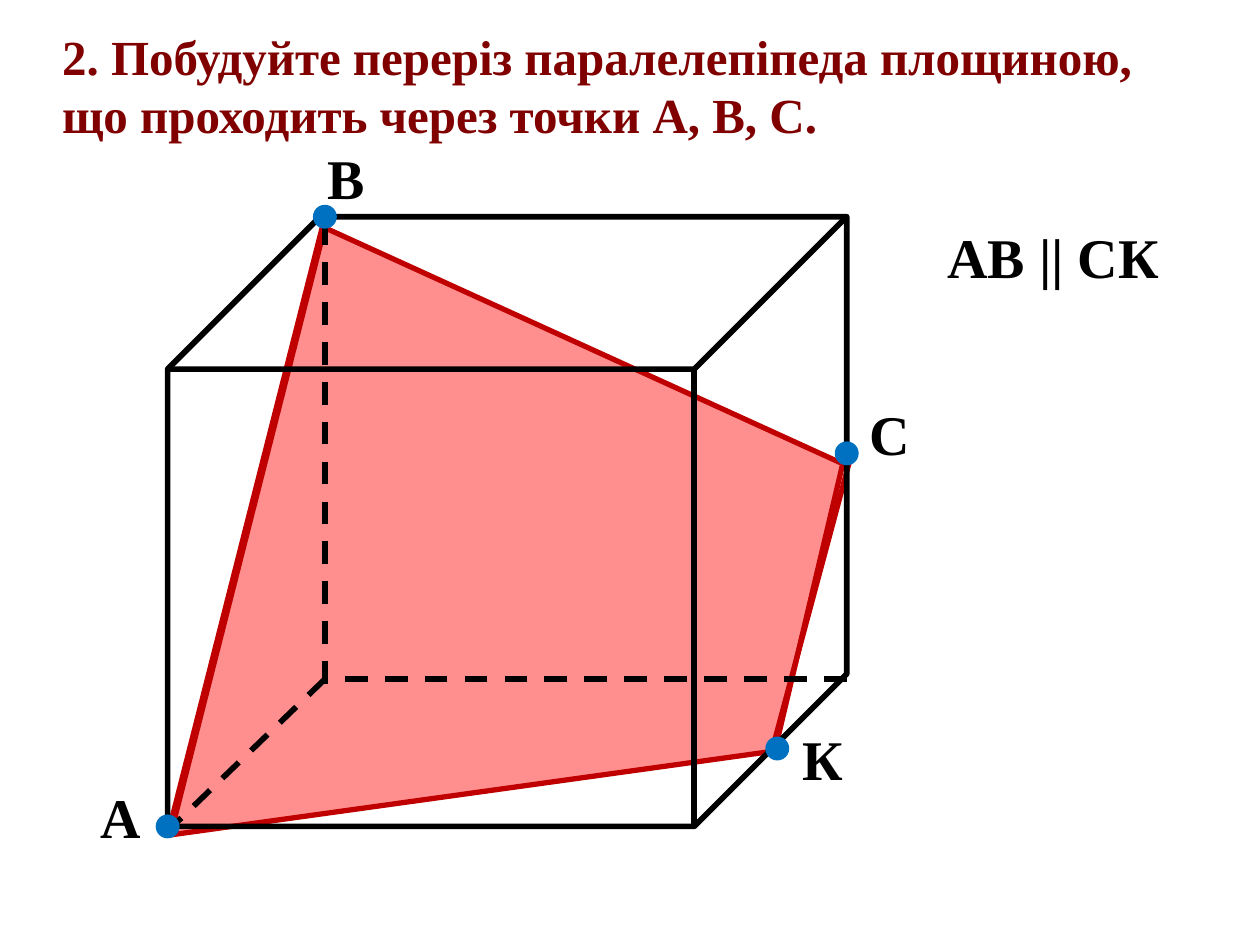
from lxml import etree
from pptx import Presentation
from pptx.dml.color import RGBColor
from pptx.enum.dml import MSO_LINE
from pptx.enum.shapes import MSO_CONNECTOR, MSO_SHAPE
from pptx.enum.text import MSO_ANCHOR, MSO_AUTO_SIZE, PP_ALIGN
from pptx.oxml.ns import qn
from pptx.util import Cm, Pt

COLORS = {"title": "800000", "edge": "000000", "point": "0070C0",
          "section": "FF5050", "section_edge": "C00000"}
FONT = "Times New Roman"
EDGE_WIDTH = 3.25
SECTION_WIDTH = 3
POINT_SIZE = 0.41


def color(name):
    return RGBColor.from_string(COLORS[name])


def style_line(line, name, width):
    line.color.rgb = color(name)
    line.width = Pt(width)


def write(frame, text, size, name):
    frame.word_wrap = True
    frame.auto_size = MSO_AUTO_SIZE.SHAPE_TO_FIT_TEXT
    frame.vertical_anchor = MSO_ANCHOR.TOP
    paragraph = frame.paragraphs[0]
    paragraph.alignment = PP_ALIGN.LEFT
    paragraph.line_spacing = 1.0
    paragraph.space_before = Pt(0)
    run = paragraph.add_run()
    run.text = text
    run.font.name = FONT
    run.font.size = Pt(size)
    run.font.bold = True
    run.font.color.rgb = color(name)


def add_label(slide, text, left, top, width=1.35):
    label = slide.shapes.add_textbox(Cm(left), Cm(top), Cm(width), Cm(1.63))
    write(label.text_frame, text, 32, "edge")


def add_segment(slide, start, end, name, width, dashed=False):
    segment = slide.shapes.add_connector(
        MSO_CONNECTOR.STRAIGHT, *(Cm(value) for value in (*start, *end)))
    style_line(segment.line, name, width)
    if dashed:
        segment.line.dash_style = MSO_LINE.DASH
    etree.SubElement(segment._element.spPr, qn("a:effectLst"))


def add_task(slide, left, top, width, height):
    task = slide.shapes.title
    task.left, task.top, task.width, task.height = map(Cm, (left, top, width, height))
    write(task.text_frame,
          "2. Побудуйте переріз паралелепіпеда площиною, "
          "що проходить через точки А, В, С.", 28, "title")


def add_section(slide, left, top):
    def at(x, y):
        return left + x, top + y

    # Translucent quadrilateral through А, В, С, К
    corners = [(Cm(x), Cm(y)) for x, y in
               (at(0, 12.47), at(3.12, 0.2), at(13.61, 4.98), at(12.24, 10.77))]
    builder = slide.shapes.build_freeform(*corners[0])
    builder.add_line_segments(corners[1:], close=True)
    section = builder.convert_to_shape()
    section.shadow.inherit = False
    section.fill.solid()
    section.fill.fore_color.rgb = color("section")
    tint = section._element.spPr.find(qn("a:solidFill"))[0]
    etree.SubElement(tint, qn("a:alpha"), val="64000")
    style_line(section.line, "section_edge", SECTION_WIDTH)

    # Parallel sides СК and АВ
    for start, end in (((13.74, 4.95), (12.16, 10.84)),
                       ((3.17, 0.2), (0.13, 12.17))):
        add_segment(slide, at(*start), at(*end), "section_edge", SECTION_WIDTH)


def add_solid(slide, left, top, width, height):
    depth = height / 4
    back_left, back_bottom = left + 3.17, top + 9.32

    # Hidden edges
    hidden_corner = (back_left, back_bottom)
    for start, end in (
            ((back_left, back_bottom + 0.1), (back_left, top - 0.2)),
            ((left + width, back_bottom), hidden_corner),
            (hidden_corner, (left + 0.15, top + height - 0.05))):
        add_segment(slide, start, end, "edge", EDGE_WIDTH, dashed=True)

    # Visible edges
    solid = slide.shapes.add_shape(
        MSO_SHAPE.CUBE, Cm(left), Cm(top), Cm(width), Cm(height))
    solid.adjustments[0] = depth / min(width, height)
    solid.shadow.inherit = False
    solid.fill.background()
    style_line(solid.line, "edge", EDGE_WIDTH)


def add_points(slide, left, top, width, height):
    # Letter, point centre, label offset from the centre
    points = (("А", 0, height, -1.6, -1),
              ("В", 3.17, 0, -0.2, -1.6),
              ("С", width, 4.77, 0.2, -1.22),
              ("К", 12.29, 10.72, 0.26, -0.61))
    for letter, x, y, label_dx, label_dy in points:
        center_x, center_y = left + x, top + y
        point = slide.shapes.add_shape(
            MSO_SHAPE.OVAL, Cm(center_x - POINT_SIZE / 2),
            Cm(center_y - POINT_SIZE / 2), Cm(POINT_SIZE), Cm(POINT_SIZE))
        point.shadow.inherit = False
        point.fill.solid()
        point.fill.fore_color.rgb = color("point")
        style_line(point.line, "point", 2)
        add_label(slide, letter, center_x + label_dx, center_y + label_dy)


def main():
    presentation = Presentation()
    presentation.slide_width, presentation.slide_height = Cm(25.4), Cm(19.05)
    slide = presentation.slides.add_slide(presentation.slide_layouts[5])

    solid_box = (3.38, 4.37, 13.69, 12.29)
    add_task(slide, 1, 0.4, 23, 2.64)
    add_section(slide, *solid_box[:2])
    add_solid(slide, *solid_box)
    add_points(slide, *solid_box)
    add_label(slide, "АВ || СК", 18.85, 4.37, 5.94)

    presentation.save("out.pptx")


if __name__ == "__main__":
    main()
